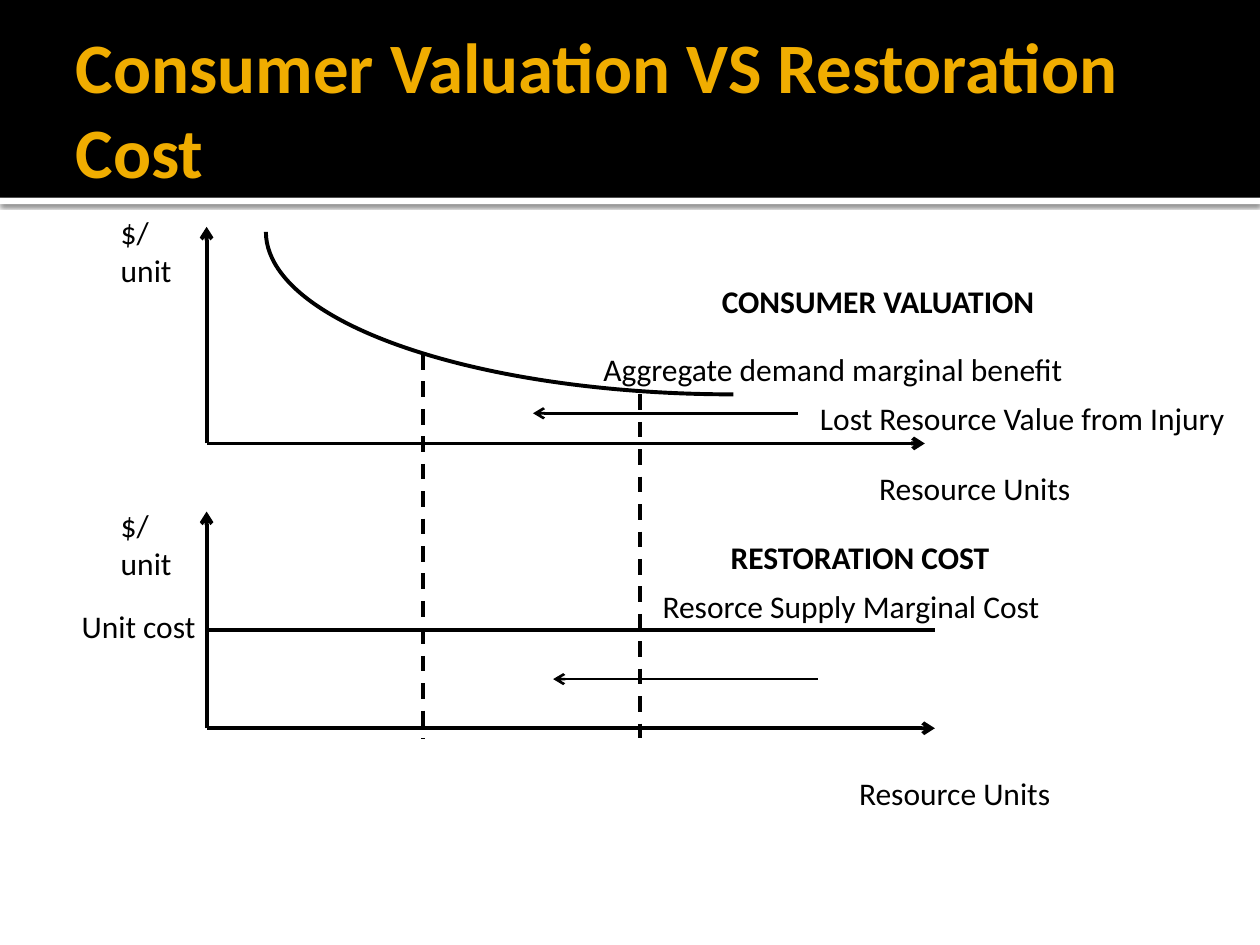
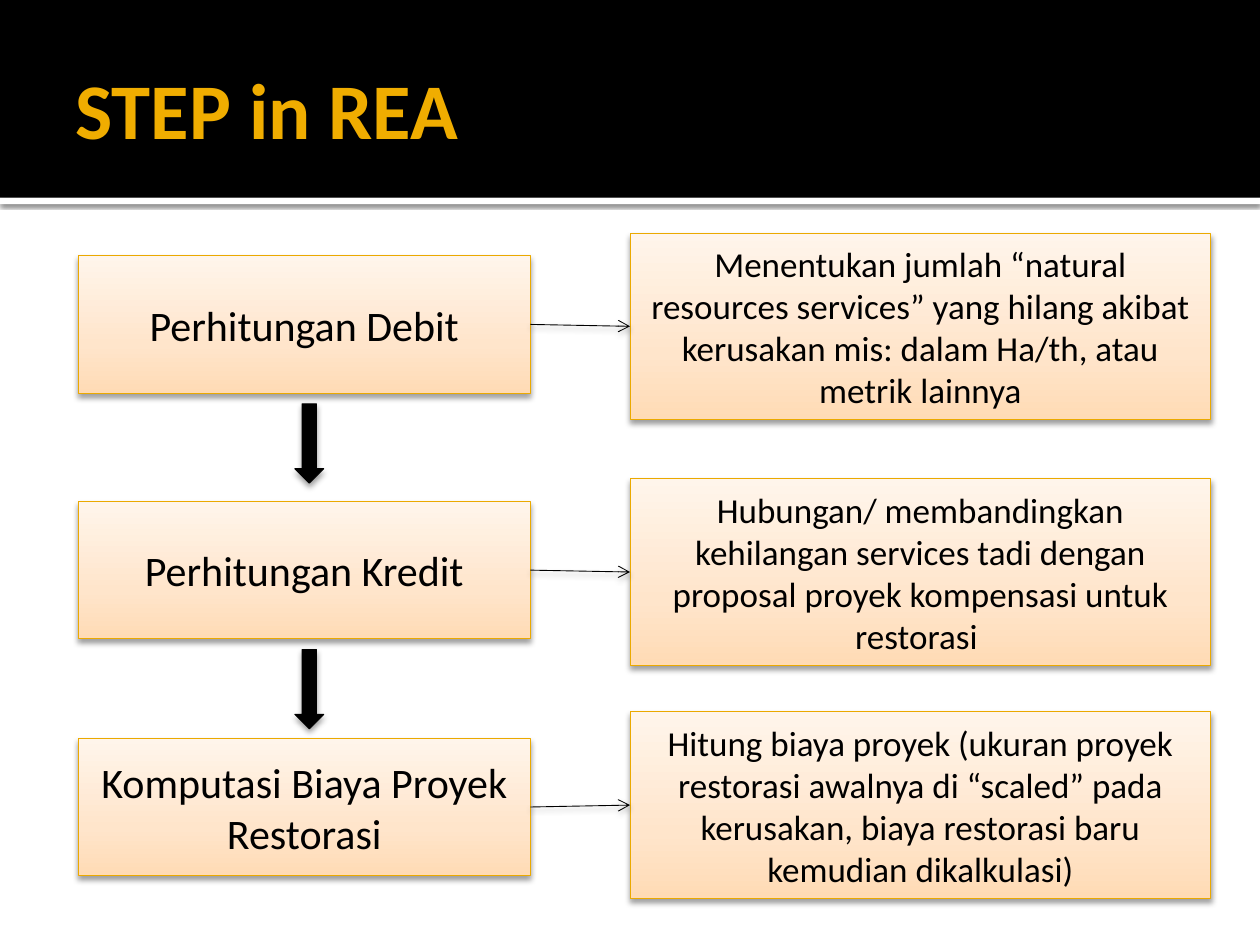
from collections import namedtuple

import pptx
import pptx.dml.color
import pptx.enum.dml
import pptx.enum.shapes
import pptx.enum.text
import pptx.oxml.ns
import pptx.util
from lxml import etree

COLOURS = {"black": "000000", "white": "FFFFFF", "gold": "F0AD00", "edge": "EBA900"}
CARD_STOPS = ((0, "FFDBB5"), (35, "FFE5CB"), (100, "FFF5EB"))
FONT = "Calibri"
SLIDE_WIDTH = pptx.util.Inches(10)
SLIDE_HEIGHT = pptx.util.Inches(7.5)
CELL = SLIDE_WIDTH / 100  # the grid has 100 columns and 75 rows
LABEL_ROWS = 4

SHAPES = pptx.enum.shapes.MSO_SHAPE
ALIGN = pptx.enum.text.PP_ALIGN
ANCHOR = pptx.enum.text.MSO_ANCHOR

# Shadow: opacity in percent, blur and distance in points
Shadow = namedtuple("Shadow", "opacity blur distance")
BAND_SHADOW = Shadow(60, 2.5, 0.8)
CARD_SHADOW = Shadow(38, 3.5, 2)


class Box(namedtuple("Box", "left top width height")):
    """An area measured in grid columns and rows."""

    def inner(self, column, row, width, height):
        return Box(self.left + column, self.top + row, width, height)

    def point(self, column, row):
        return self.left + column, self.top + row

    def lengths(self):
        return [cells(value) for value in self]


def cells(count):
    return pptx.util.Emu(round(count * CELL))


def colour(name):
    return pptx.dml.color.RGBColor.from_string(COLOURS[name])


def add_child(parent, tag, **attributes):
    child = etree.SubElement(parent, pptx.oxml.ns.qn(tag))
    for name, value in attributes.items():
        child.set(name, str(value))
    return child


def set_shadow(item, shadow=None):
    """Replace the theme's effects; call it after fill and line are set."""
    effects = add_child(item._element.spPr, "a:effectLst")
    if shadow:
        outer = add_child(effects, "a:outerShdw",
                          blurRad=pptx.util.Pt(shadow.blur),
                          dist=pptx.util.Pt(shadow.distance),
                          dir=90 * 60000, rotWithShape=0)
        tint = add_child(outer, "a:srgbClr", val=COLOURS["black"])
        add_child(tint, "a:alpha", val=shadow.opacity * 1000)


def set_card_gradient(shape):
    shape.fill.gradient()
    shape.fill.gradient_angle = 90
    stops = shape._element.spPr.find(".//" + pptx.oxml.ns.qn("a:gsLst"))
    for stop in list(stops):
        stops.remove(stop)
    for position, tint in CARD_STOPS:
        add_child(add_child(stops, "a:gs", pos=position * 1000), "a:srgbClr", val=tint)


def write(shape, text, size=18, tint="black", bold=False,
          align=ALIGN.LEFT, anchor=ANCHOR.TOP):
    frame = shape.text_frame
    frame.word_wrap = True
    frame.vertical_anchor = anchor
    para = frame.paragraphs[0]
    para.alignment = align
    span = para.add_run()
    span.text = text
    span.font.name = FONT
    span.font.size = pptx.util.Pt(size)
    span.font.bold = bold
    span.font.color.rgb = colour(tint)


def add_label(page, box, text, **style):
    write(page.shapes.add_textbox(*box.lengths()), text, **style)


def add_shape(page, kind, box, fill=None, line=None, line_width=0.5, shadow=None):
    """Fill is a colour name, "card" for the card gradient, or None."""
    shape = page.shapes.add_shape(kind, *box.lengths())
    if fill == "card":
        set_card_gradient(shape)
    elif fill:
        shape.fill.solid()
        shape.fill.fore_color.rgb = colour(fill)
    else:
        shape.fill.background()
    if line:
        shape.line.color.rgb = colour(line)
        shape.line.width = pptx.util.Pt(line_width)
    else:
        shape.line.fill.background()
    set_shadow(shape, shadow)
    return shape


def add_line(page, start, end, width=2.25, arrow=False, dashed=False, shadow=None):
    line = page.shapes.add_connector(
        pptx.enum.shapes.MSO_CONNECTOR.STRAIGHT,
        *(cells(value) for value in (*start, *end)))
    line.line.color.rgb = colour("black")
    line.line.width = pptx.util.Pt(width)
    if dashed:
        line.line.dash_style = pptx.enum.dml.MSO_LINE.DASH
    if arrow:
        add_child(line.line._get_or_add_ln(), "a:tailEnd", type="arrow")
    set_shadow(line, shadow)
    return line


def add_header_bands(page):
    """Draw the title bands once and hand them to the layout behind the page."""
    bands = (add_shape(page, SHAPES.RECTANGLE, Box(0, 15.7, 100, 0.5),
                       fill="white", shadow=BAND_SHADOW),
             add_shape(page, SHAPES.RECTANGLE, Box(0, 0, 100, 15.7), fill="black"))
    for index, band in enumerate(bands, start=2):
        page.slide_layout.shapes._spTree.insert(index, band._element)


def add_page(deck, title, size):
    page = deck.slides.add_slide(deck.slide_layouts[5])
    heading = page.shapes.title
    (heading.left, heading.top,
     heading.width, heading.height) = Box(5, 1.7, 90, 13.7).lengths()
    write(heading, title, size=size, tint="gold", bold=True, anchor=ANCHOR.MIDDLE)
    frame = heading.text_frame
    frame.margin_left = pptx.util.Inches(0.1)
    frame.margin_right = frame.margin_top = frame.margin_bottom = pptx.util.Inches(0.05)
    return page


def draw_axes(page, box, unit_row, shift_start, shift_row):
    """Axes of one graph, its price label and the thin arrow of the shift."""
    origin = box.point(0, box.height)
    add_line(page, origin, box.point(0, 0), arrow=True)
    add_line(page, origin, box.point(box.width, box.height), arrow=True)
    add_line(page, box.point(shift_start, shift_row),
             box.point(shift_start - 21, shift_row), width=1.5, arrow=True)
    add_label(page, box.inner(-7.8, unit_row, 8.1, LABEL_ROWS), "$/unit")


def draw_labels(page, box, heading, labels):
    """Each label is column, row, width and text; the heading is bold."""
    for column, row, width, text in (heading, *labels):
        add_label(page, box.inner(column, row, width, LABEL_ROWS), text,
                  bold=text == heading[-1])


def draw_valuation(page, box):
    draw_axes(page, box, unit_row=-1.6, shift_start=46.9, shift_row=14.8)
    demand = add_shape(page, SHAPES.ARC, box.inner(4.7, -12.5, 74.2, 25.8),
                       line="black", line_width=2.25)
    demand.rotation = 180
    draw_labels(page, box, (39.9, 3.9, 29.5, "CONSUMER VALUATION"), (
        (30.5, 9.3, 40, "Aggregate demand marginal benefit"),
        (47.7, 13.2, 35, "Lost Resource Value from Injury"),
        (52.4, 18.7, 17.6, "Resource Units")))


def draw_restoration(page, box):
    draw_axes(page, box, unit_row=-0.9, shift_start=48.5, shift_row=13.3)
    add_line(page, box.point(0, 9.4), box.point(box.width, 9.4))
    draw_labels(page, box, (40.6, 1.6, 25.3, "RESTORATION COST"), (
        (35.2, 5.5, 32.8, "Resorce Supply Marginal Cost"),
        (-10.9, 7.1, 11.4, "Unit cost"),
        (50.8, 20.3, 17.6, "Resource Units")))


def build_cost_page(deck):
    page = add_page(deck, "Consumer Valuation VS Restoration Cost", size=40.5)
    add_header_bands(page)
    draw_valuation(page, Box(16.4, 18, 57, 17.2))
    draw_restoration(page, Box(16.4, 40.6, 57.8, 17.2))
    for column, curve_row in ((33.6, 28.1), (50.8, 31.3)):
        add_line(page, (column, curve_row), (column, 58.6), dashed=True)


def draw_step(page, box, step, detail, step_row, last):
    """One step card, joined to its detail card, with an arrow to the next step."""
    cards = []
    for area, text, size in ((box.inner(0, step_row, 35.9, 10.9), step, 24),
                             (box.inner(43.8, 0, 46.1, box.height), detail, 20)):
        card = add_shape(page, SHAPES.RECTANGLE, area, fill="card", line="edge",
                         shadow=CARD_SHADOW)
        write(card, text, size=size, align=ALIGN.CENTER, anchor=ANCHOR.MIDDLE)
        cards.append(card)
    link = add_line(page, box.point(35.9, 7), box.point(43.8, 7), width=0.5,
                    arrow=True, shadow=CARD_SHADOW)
    link.begin_connect(cards[0], 3)
    link.end_connect(cards[1], 1)
    if not last:
        add_shape(page, SHAPES.DOWN_ARROW, box.inner(17.2, 13.55, 2.3, 6.3),
                  fill="black", line="black", shadow=CARD_SHADOW)


def build_steps_page(deck):
    page = add_page(deck, "STEP in REA", size=45)
    steps = (
        (18.5, 1.8, "Perhitungan Debit",
         "Menentukan jumlah “natural resources services” yang hilang akibat "
         "kerusakan mis: dalam Ha/th, atau metrik lainnya"),
        (38, 1.8, "Perhitungan Kredit",
         "Hubungan/ membandingkan kehilangan services tadi dengan proposal "
         "proyek kompensasi untuk restorasi "),
        (56.5, 2.1, "Komputasi Biaya Proyek Restorasi",
         "Hitung biaya proyek (ukuran proyek restorasi awalnya di “scaled” pada "
         "kerusakan, biaya restorasi baru kemudian dikalkulasi)"))
    for row, step_row, step, detail in steps:
        draw_step(page, Box(6.2, row, 89.9, 14.8), step, detail, step_row,
                  last=step == steps[-1][2])


def main():
    deck = pptx.Presentation()
    deck.slide_width = SLIDE_WIDTH
    deck.slide_height = SLIDE_HEIGHT
    build_cost_page(deck)
    build_steps_page(deck)
    deck.save("out.pptx")


if __name__ == "__main__":
    main()
